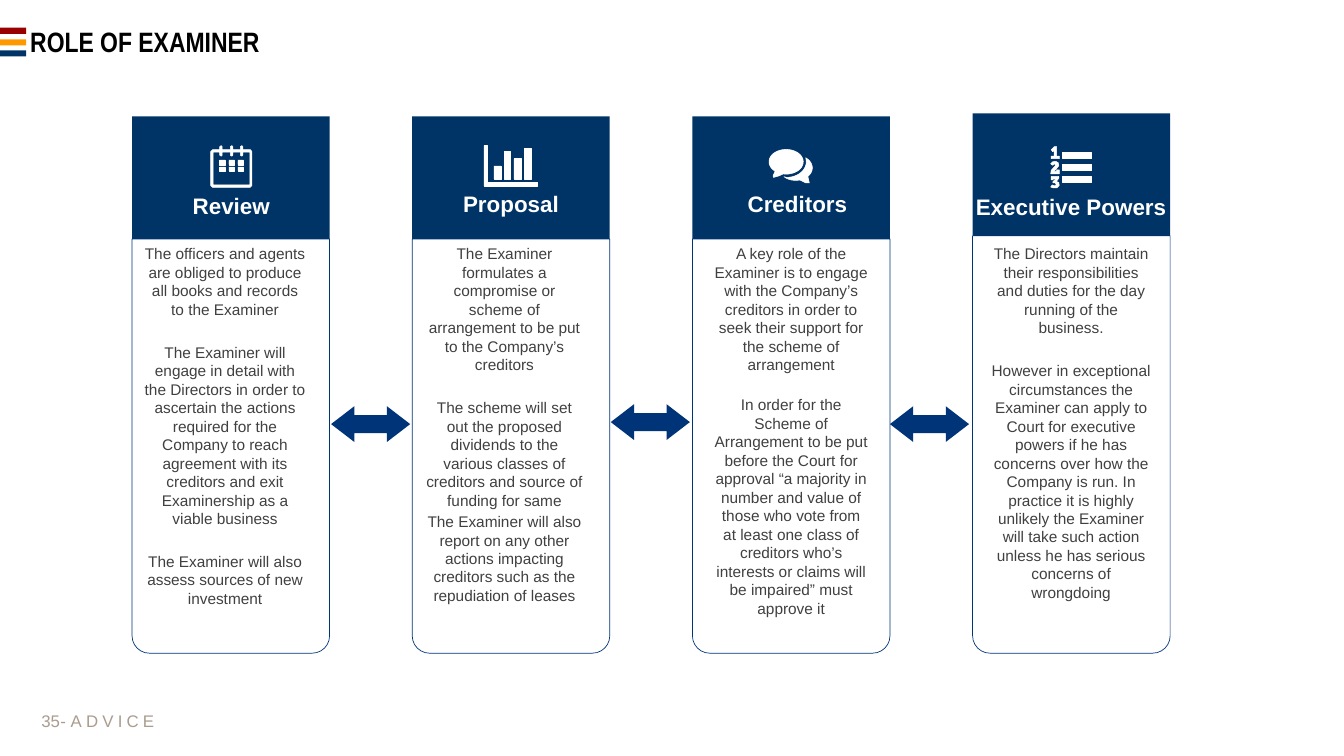
import math
from dataclasses import dataclass

import pptx
import pptx.dml.color
import pptx.enum.shapes
import pptx.enum.text
import pptx.util

Inches = pptx.util.Inches
Pt = pptx.util.Pt
SHAPE = pptx.enum.shapes.MSO_SHAPE
ALIGN = pptx.enum.text.PP_ALIGN
ANCHOR = pptx.enum.text.MSO_ANCHOR


@dataclass(frozen=True)
class Theme:
    navy: str = "003366"
    blue: str = "003478"
    red: str = "990000"
    orange: str = "FF9900"
    white: str = "FFFFFF"
    black: str = "000000"
    body: str = "404040"
    footer: str = "AA9C8F"
    font: str = "Arial"
    title_font: str = "Arial Narrow"
    title_size: int = 40
    heading_size: int = 32
    footer_size: int = 24
    body_size: int = 22


theme = Theme()


def paint(shape, fill=None, line=None, width=0.75):
    shape.shadow.inherit = False
    if fill:
        shape.fill.solid()
        shape.fill.fore_color.rgb = pptx.dml.color.RGBColor.from_string(fill)
    else:
        shape.fill.background()
    if line:
        shape.line.color.rgb = pptx.dml.color.RGBColor.from_string(line)
        shape.line.width = Pt(width)
    else:
        shape.line.fill.background()


def add_run(paragraph, text, size, color, bold=False, font=theme.font):
    run = paragraph.add_run()
    run.text = text
    run.font.name = font
    run.font.size = Pt(size)
    run.font.bold = bold
    run.font.color.rgb = pptx.dml.color.RGBColor.from_string(color)
    return run


deck = pptx.Presentation()
deck.slide_width = Inches(26.67)
deck.slide_height = Inches(15)
slide = deck.slides.add_slide(deck.slide_layouts[5])
shapes = slide.shapes

# Title with its three stripes
for top, color in [(0.55, theme.red), (0.78, theme.orange), (1, theme.navy)]:
    stripe = shapes.add_shape(SHAPE.RECTANGLE, 0, Inches(top), Inches(0.52), Inches(0.12))
    paint(stripe, color)

title = shapes.title
title.left, title.top = Inches(0.5), Inches(0.46)
title.width, title.height = Inches(25.67), Inches(0.79)
title.text_frame.vertical_anchor = ANCHOR.MIDDLE
title.text_frame.auto_size = pptx.enum.text.MSO_AUTO_SIZE.NONE
title_line = title.text_frame.paragraphs[0]
title_line.alignment = ALIGN.LEFT
title_line.line_spacing = 0.9
add_run(title_line, "ROLE OF EXAMINER", theme.title_size, theme.black, True, theme.title_font)

# Footer: page number and firm name
page = shapes.add_textbox(Inches(0.44), Inches(13.9), Inches(0.75), Inches(0.8)).text_frame
page.margin_left = page.margin_right = 0
page.word_wrap = True
page.vertical_anchor = ANCHOR.MIDDLE
page.paragraphs[0].alignment = ALIGN.RIGHT
add_run(page.paragraphs[0], "35", theme.footer_size, theme.footer)

firm = shapes.add_textbox(Inches(1.1), Inches(13.9), Inches(2.29), Inches(0.8)).text_frame
firm.word_wrap = False
firm.vertical_anchor = ANCHOR.MIDDLE
add_run(firm.paragraphs[0], "- ", theme.footer_size, theme.footer)
firm_name = add_run(firm.paragraphs[0], "ADVICE", theme.footer_size, theme.footer)
firm_name.font._element.set("spc", "600")

# Columns: heading, its left, top and width; header top; text left and width;
# then paragraphs, each with the space before it in points
columns = [
    ("Review", 3.82, 3.82, 1.54, 2.31, 2.87, 3.19, [
        (0, "The officers and agents are obliged to produce all books and records to the Examiner"),
        (35, "The Examiner will engage in detail with the Directors in order to ascertain the "
             "actions required for the Company to reach agreement with its creditors and exit "
             "Examinership as a viable business"),
        (35, "The Examiner will also assess sources of new investment")]),
    ("Proposal", 9.18, 3.78, 1.92, 2.31, 8.44, 3.14, [
        (0, "The Examiner formulates a compromise or scheme of arrangement to be put to the "
            "Company’s creditors"),
        (35, "The scheme will set out the proposed dividends to the various classes of "
             "creditors and source of funding for same"),
        (4.4, "The Examiner will also report on any other actions impacting creditors such as "
              "the repudiation of leases")]),
    ("Creditors", 14.81, 3.78, 2.03, 2.31, 14.16, 3.08, [
        (0, "A key role of the Examiner is to engage with the Company’s creditors in order to "
            "seek their support for the scheme of arrangement"),
        (31, "In order for the Scheme of Arrangement to be put before the Court for approval "
             "“a majority in number and value of those who vote from at least one class of "
             "creditors who’s interests or claims will be impaired” must approve it")]),
    ("Executive Powers", 19.35, 3.84, 3.81, 2.25, 19.64, 3.23, [
        (0, "The Directors maintain their responsibilities and duties for the day running of "
            "the business."),
        (35, "However in exceptional circumstances the Examiner can apply to Court for "
             "executive powers if he has concerns over how the Company is run. In practice it "
             "is highly unlikely the Examiner will take such action unless he has serious "
             "concerns of wrongdoing")]),
]
card_width, header_height, card_bottom = 3.92, 2.43, 12.96
for index, column in enumerate(columns):
    name, name_left, name_top, name_width, top, text_left, text_width, paragraphs = column
    left = 2.62 + index * 5.56
    header = shapes.add_shape(SHAPE.RECTANGLE, Inches(left), Inches(top),
                              Inches(card_width), Inches(header_height))
    paint(header, theme.navy)
    card_top = top + header_height
    card = shapes.add_shape(SHAPE.ROUND_2_SAME_RECTANGLE, Inches(left), Inches(card_top),
                            Inches(card_width), Inches(card_bottom - card_top))
    card.adjustments[0], card.adjustments[1] = 0, 0.088
    paint(card, line=theme.blue, width=1)

    heading = shapes.add_textbox(Inches(name_left), Inches(name_top),
                                 Inches(name_width), Inches(0.54)).text_frame
    duties = shapes.add_textbox(Inches(text_left), Inches(4.85),
                                Inches(text_width), Inches(7.5)).text_frame
    for frame in (heading, duties):
        frame.margin_left = frame.margin_right = frame.margin_top = frame.margin_bottom = 0
    heading.word_wrap = False
    heading.paragraphs[0].alignment = ALIGN.CENTER
    add_run(heading.paragraphs[0], name, theme.heading_size, theme.white, True)
    duties.word_wrap = True
    for number, (space, text) in enumerate(paragraphs):
        duty = duties.add_paragraph() if number else duties.paragraphs[0]
        duty.alignment = ALIGN.CENTER
        duty.space_before = Pt(space)
        add_run(duty, text, theme.body_size, theme.body)

for left, top in [(6.57, 8.06), (12.12, 8.02), (17.66, 8.06)]:
    arrow = shapes.add_shape(SHAPE.LEFT_RIGHT_ARROW, Inches(left), Inches(top),
                             Inches(1.57), Inches(0.71))
    arrow.adjustments[0], arrow.adjustments[1] = 0.5, 0.651
    paint(arrow, theme.blue)

# Icons, each a list of closed contours
calendar_outer, calendar_inner = [(4.18, 3.01), (4.22, 2.97)], [(4.23, 3.02)]
for ring in (4.36, 4.57, 4.77):
    calendar_outer += [(ring, 2.97), (ring, 2.91), (ring + 0.03, 2.89),
                       (ring + 0.05, 2.91), (ring + 0.05, 2.97)]
    calendar_inner += [(ring, 3.02), (ring, 3.08), (ring + 0.03, 3.1),
                       (ring + 0.05, 3.08), (ring + 0.05, 3.02)]
calendar_outer += [(4.97, 2.97), (5, 3.01), (5, 3.68), (4.96, 3.72), (4.22, 3.72), (4.18, 3.68)]
calendar_inner += [(4.96, 3.02), (4.96, 3.67), (4.23, 3.67)]

bars = [(9.8, 3.29, 9.94, 3.55), (10.01, 3.01, 10.13, 3.55),
        (10.2, 3.15, 10.34, 3.55), (10.41, 2.94, 10.54, 3.55)]
rows = [(21.08, top, 21.66, top + 0.12) for top in (3.03, 3.26, 3.5)]
bar_contours, row_contours = [
    [[(l, t), (r, t), (r, b), (l, b)] for l, t, r, b in boxes] for boxes in (bars, rows)]
axes = [(9.6, 2.89), (9.66, 2.89), (9.66, 3.62), (10.67, 3.62), (10.67, 3.69), (9.6, 3.69)]

front, back_right, back_bottom, back_inner = [
    [(x + rx * math.cos(math.radians(a)), y + ry * math.sin(math.radians(a)))
     for a in range(start, end, step)]
    for x, y, rx, ry, start, end, step in [
        (15.6, 3.21, 0.34, 0.245, 130, 463, 6), (15.79, 3.33, 0.33, 0.25, -53, 51, 8),
        (15.79, 3.33, 0.33, 0.25, 75, 136, 10), (15.61, 3.21, 0.39, 0.31, 90, -14, -8)]]

one = [(20.86, 2.97), (20.92, 2.91), (20.97, 2.91), (20.97, 3.1), (21.02, 3.1), (21.02, 3.15),
       (20.86, 3.15), (20.86, 3.1), (20.92, 3.1), (20.92, 2.98), (20.89, 3.01)]
two = [(20.85, 3.25), (20.89, 3.21), (20.95, 3.2), (21, 3.23), (21.01, 3.29), (20.92, 3.4),
       (20.97, 3.4), (20.97, 3.37), (21.02, 3.37), (21.02, 3.45), (20.85, 3.45), (20.86, 3.38),
       (20.95, 3.28), (20.93, 3.25), (20.89, 3.28)]
three = [(20.86, 3.5), (21.01, 3.5), (21.01, 3.54), (20.96, 3.6), (21.01, 3.62), (21.02, 3.68),
         (20.97, 3.73), (20.9, 3.73), (20.85, 3.71), (20.88, 3.67), (20.94, 3.69), (20.96, 3.66),
         (20.94, 3.63), (20.9, 3.63), (20.89, 3.61), (20.95, 3.55), (20.9, 3.55), (20.9, 3.57),
         (20.86, 3.57)]

for contours in [
    [calendar_outer, calendar_inner],
    [axes] + bar_contours,
    [front + [(15.46, 3.49), (15.35, 3.52), (15.34, 3.49)],
     back_right + [(16.06, 3.63), (15.99, 3.63), (15.87, 3.57)] + back_bottom + back_inner],
    [one, two, three] + row_contours,
]:
    builder = None
    for contour in contours:
        points = [(Inches(x), Inches(y)) for x, y in contour]
        if builder is None:
            builder = shapes.build_freeform(*points[0])
        else:
            builder.move_to(*points[0])
        builder.add_line_segments(points[1:], close=True)
    paint(builder.convert_to_shape(), theme.white, theme.white)

for left in (4.36, 4.54, 4.72):
    for top in (3.17, 3.2, 3.31):
        day = shapes.add_shape(SHAPE.RECTANGLE, Inches(left), Inches(top),
                               Inches(0.11), Inches(0.08))
        paint(day, theme.white, theme.white)

deck.save("out.pptx")
